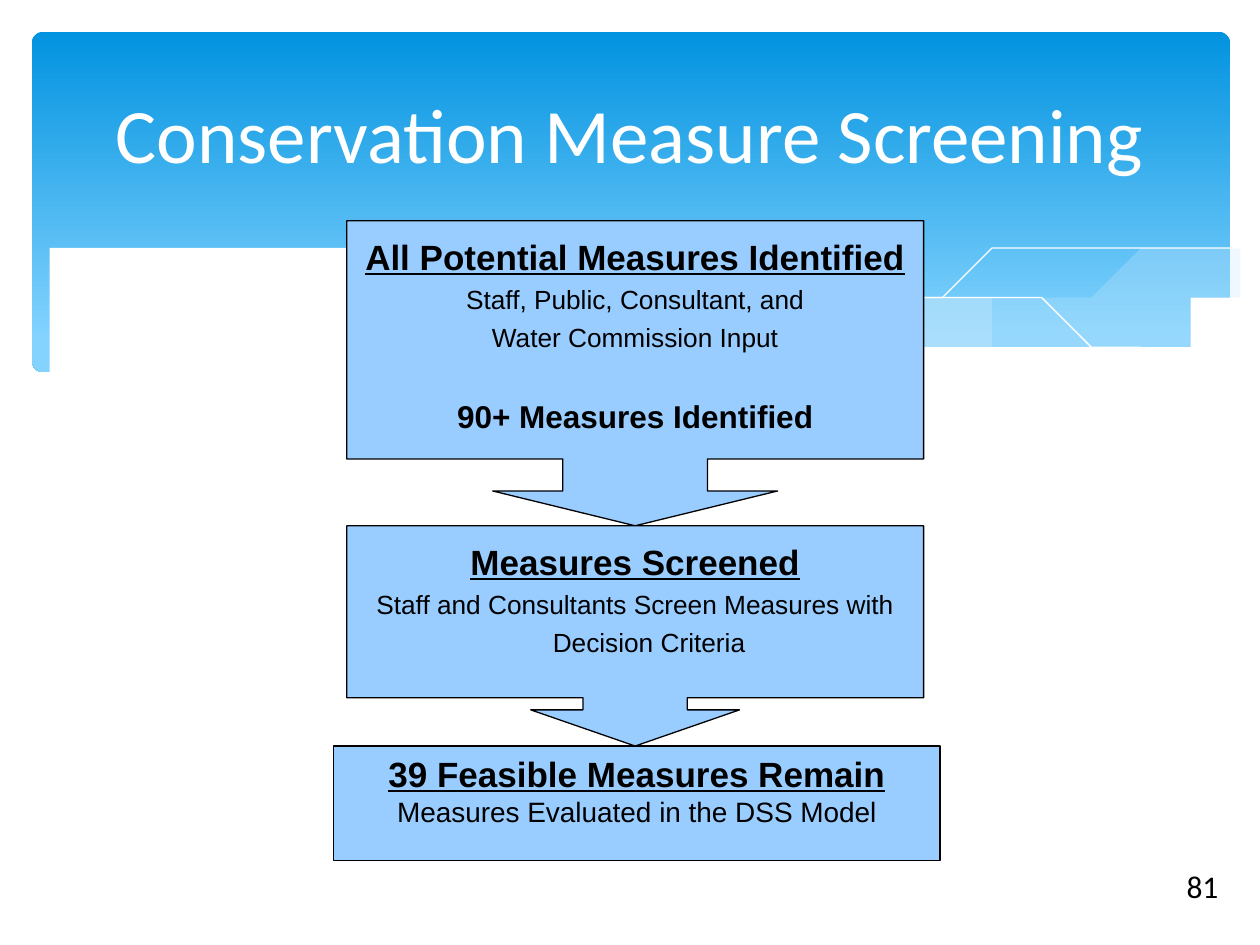
"""Build the Conservation Measure Screening slide: a wavy header above three flow boxes."""
from lxml import etree
from pptx import Presentation
from pptx.dml.color import RGBColor
from pptx.enum.shapes import MSO_SHAPE as Shape
from pptx.enum.text import MSO_ANCHOR as Anchor, PP_ALIGN as Align
from pptx.oxml.ns import qn
from pptx.util import Cm, Pt

COLORS = {"sky": "0293E0", "pale": "83D3FE", "mist": "C6E7FC",
          "box": "99CCFF", "white": "FFFFFF", "black": "000000"}

TITLE = "Conservation Measure Screening"
PAGE = "81"
HEAD = {"size": 20, "bold": True, "underline": True}
BODY = {"size": 15}

STEPS = [
    {"kind": Shape.DOWN_ARROW_CALLOUT, "at": (6.99, 4.45, 11.63, 6.15),
     "adj": (0.474, 0.467, 0.114, 0.781), "spacing": 1.2, "hang": 0.56,
     "text": [("All Potential Measures Identified", HEAD),
              ("Staff, Public, Consultant, and", BODY),
              ("Water Commission Input", BODY),
              ("90+ Measures Identified", {"size": 18, "bold": True, "before": 20.7})]},
    {"kind": Shape.RECTANGLE, "at": (6.73, 15.04, 12.22, 2.31),
     "adj": (), "spacing": 1.0, "hang": 0,
     "text": [("39 Feasible Measures Remain", HEAD),
              ("Measures Evaluated in the DSS Model", {"size": 16})]},
    {"kind": Shape.DOWN_ARROW_CALLOUT, "at": (6.99, 10.6, 11.63, 4.44),
     "adj": (0.474, 0.474, 0.164, 0.781), "spacing": 1.2, "hang": 0.56,
     "text": [("Measures Screened", HEAD),
              ("Staff and Consultants Screen Measures with Decision Criteria", BODY)]},
]

RIGHT_WAVE = [
    [(24.78, 5.08), (24.08, 5.18), (23.01, 5.41), (21.87, 5.66), (20.45, 6.02),
     (19.13, 6.3), (17.93, 6.53), (16.79, 6.73)],
    [(16.79, 6.73), (17.91, 6.88), (18.92, 6.99), (20.12, 7.04), (20.93, 7.04),
     (21.92, 6.99), (22.78, 6.86), (23.57, 6.68), (24.1, 6.53), (24.79, 6.27)],
]
MIDDLE_WAVE = [
    [(22.68, 6.93), (21.26, 6.73), (19.69, 6.45), (17.93, 6.1), (15.98, 5.64),
     (14.45, 5.28), (13.06, 5.03), (11.81, 4.85), (10.67, 4.75), (9.17, 4.7),
     (7.95, 4.78), (7.26, 4.85)],
    [(7.26, 4.85), (8.69, 5.05), (10.26, 5.36), (11.4, 5.64), (13.46, 6.1),
     (15.27, 6.48), (16.89, 6.76), (18.34, 6.96), (19.63, 7.04), (20.78, 7.06),
     (21.77, 7.04), (22.68, 6.93)],
]
FALLING_LINE = [
    [(7.85, 4.95), (8.74, 4.83), (9.83, 4.75), (11, 4.75), (12.42, 4.83),
     (14.12, 5), (16.15, 5.28), (18.47, 5.74), (21.11, 6.38), (23.04, 6.91)],
]
RISING_LINE = [
    [(15.57, 6.53), (17.65, 5.97), (19.71, 5.49), (21.23, 5.18), (22.73, 4.93),
     (23.83, 4.78), (24.77, 4.7)],
]
WHITE_WAVE = [
    [(24.82, 6.25), (23.88, 6.58), (22.83, 6.83), (21.59, 6.99), (20.55, 7.04),
     (19.33, 6.99), (17.98, 6.86), (16.46, 6.65), (14.71, 6.35), (12.78, 5.92),
     (11.35, 5.59), (9.93, 5.26), (8.64, 5), (7.42, 4.83), (6.35, 4.72),
     (4.9, 4.67), (3.71, 4.7), (2.69, 4.8), (1.7, 5), (1.02, 5.21), (0.58, 5.41)],
    [(0.58, 8.36), (24.82, 8.36)],
]
WAVES = [(RIGHT_WAVE, "mist", 29), (MIDDLE_WAVE, "mist", 40), (FALLING_LINE, None, 100),
         (RISING_LINE, None, 100), (WHITE_WAVE, "white", 100)]


def rgb(name):
    return RGBColor.from_string(COLORS[name])


def smooth(pts, steps=4):
    if len(pts) < 3:
        return pts
    ends = [pts[0], *pts, pts[-1]]
    out = [pts[0]]
    for a, b, c, d in zip(ends, ends[1:], ends[2:], ends[3:]):
        for t in (i / steps for i in range(1, steps + 1)):
            out.append(tuple(
                (2 * q + (r - p) * t + (2 * p - 5 * q + 4 * r - s) * t ** 2
                 + (3 * q - p - 3 * r + s) * t ** 3) / 2
                for p, q, r, s in zip(a, b, c, d)))
    return out


def add_wave(shapes, curves, color, opacity):
    pts = [pt for curve in curves for pt in smooth(curve)]
    fb = shapes.build_freeform(*pts[0], scale=Cm(1))
    fb.add_line_segments(pts[1:], close=color is not None)
    sp = fb.convert_to_shape()
    sp.shadow.inherit = False
    if color is None:
        sp.fill.background()
        sp.line.color.rgb = rgb("white")
        sp.line.width = Pt(0)
        return
    sp.fill.solid()
    sp.fill.fore_color.rgb = rgb(color)
    sp.line.fill.background()
    if opacity < 100:
        clr = sp.fill._xPr.find(qn("a:solidFill"))[0]
        etree.SubElement(clr, qn("a:alpha")).set("val", str(opacity * 1000))


def add_header(shapes):
    sp = shapes.add_shape(Shape.ROUNDED_RECTANGLE, Cm(0.64), Cm(0.64), Cm(24.16), Cm(6.86))
    sp.adjustments[0] = 0.034
    sp.shadow.inherit = False
    sp.line.fill.background()
    sp.fill.gradient()
    sp.fill.gradient_angle = 270
    for stop, (pos, name) in zip(sp.fill.gradient_stops, [(0, "sky"), (0.9, "pale")]):
        stop.position = pos
        stop.color.rgb = rgb(name)


def add_label(shapes, text, at, size, color, align, wrap):
    tf = shapes.add_textbox(*map(Cm, at)).text_frame
    tf.word_wrap = wrap
    tf.vertical_anchor = Anchor.MIDDLE
    p = tf.paragraphs[0]
    p.text, p.alignment = text, align
    p.font.name, p.font.size, p.font.color.rgb = "Calibri", Pt(size), rgb(color)


def add_step(shapes, step):
    sp = shapes.add_shape(step["kind"], *map(Cm, step["at"]))
    for i, value in enumerate(step["adj"]):
        sp.adjustments[i] = value
    sp.shadow.inherit = False
    sp.fill.solid()
    sp.fill.fore_color.rgb = rgb("box")
    sp.line.color.rgb = rgb("black")
    sp.line.width = Pt(0.75)
    tf = sp.text_frame
    tf.word_wrap = True
    tf.vertical_anchor = Anchor.TOP
    for i, (text, style) in enumerate(step["text"]):
        p = tf.add_paragraph() if i else tf.paragraphs[0]
        p.text, p.alignment = text, Align.CENTER
        p.line_spacing = step["spacing"]
        if "before" in style:
            p.space_before = Pt(style["before"])
        if step["hang"]:
            pPr = p._p.get_or_add_pPr()
            pPr.set("marL", str(Cm(step["hang"])))
            pPr.set("indent", str(-Cm(step["hang"])))
        p.font.name, p.font.size = "Arial", Pt(style["size"])
        p.font.bold = style.get("bold", False)
        p.font.underline = style.get("underline", False)
        p.font.color.rgb = rgb("black")


def main():
    prs = Presentation()
    prs.slide_width, prs.slide_height = Cm(25.4), Cm(19.05)
    shapes = prs.slides.add_slide(prs.slide_layouts[6]).shapes
    add_header(shapes)
    for wave in WAVES:
        add_wave(shapes, *wave)
    add_label(shapes, PAGE, (23.67, 17.35, 1.17, 1.02), 18, "black", Align.LEFT, False)
    add_label(shapes, TITLE, (1.27, 0.94, 22.86, 3.48), 44, "white", Align.CENTER, True)
    for step in STEPS:
        add_step(shapes, step)
    prs.save("out.pptx")


if __name__ == "__main__":
    main()
